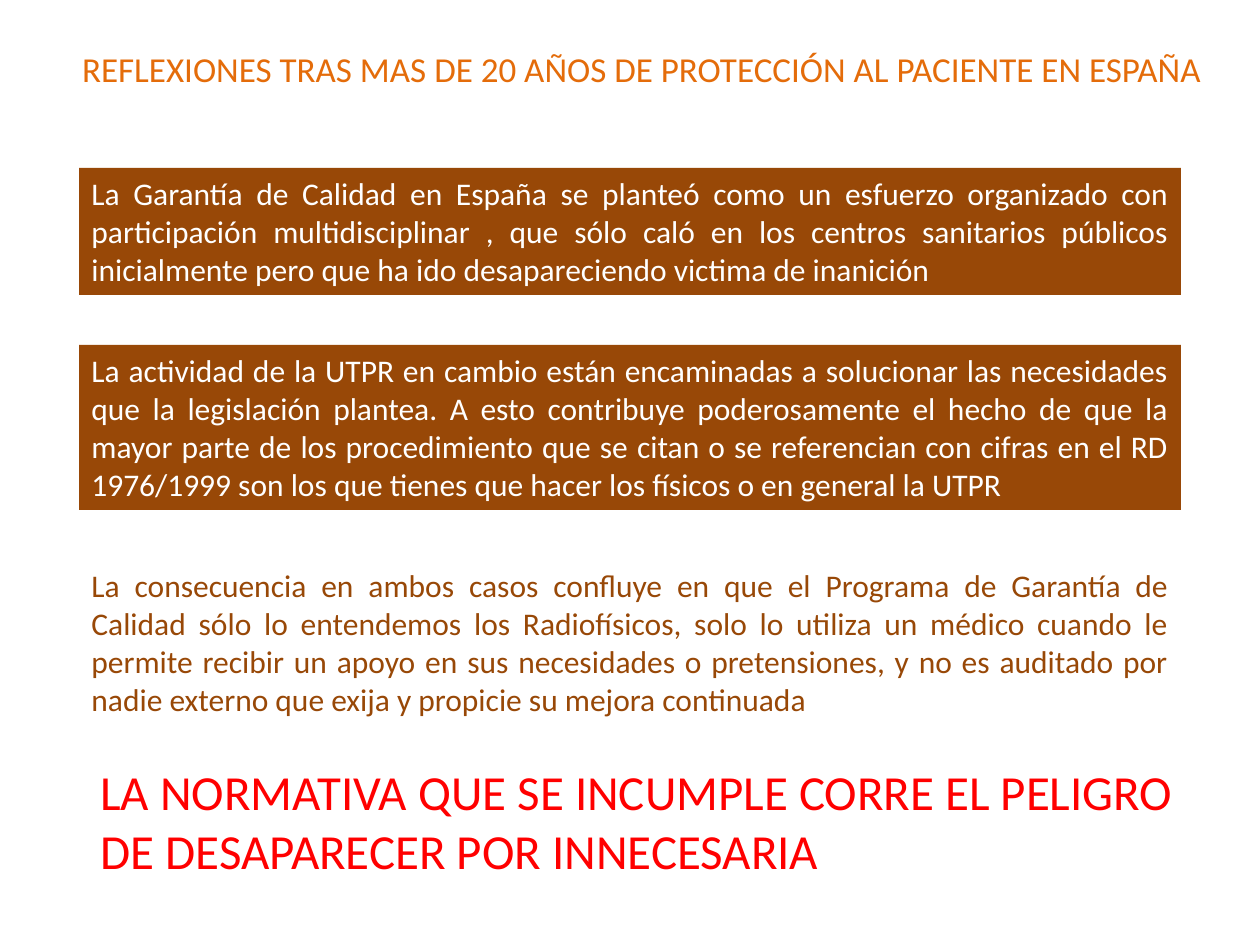
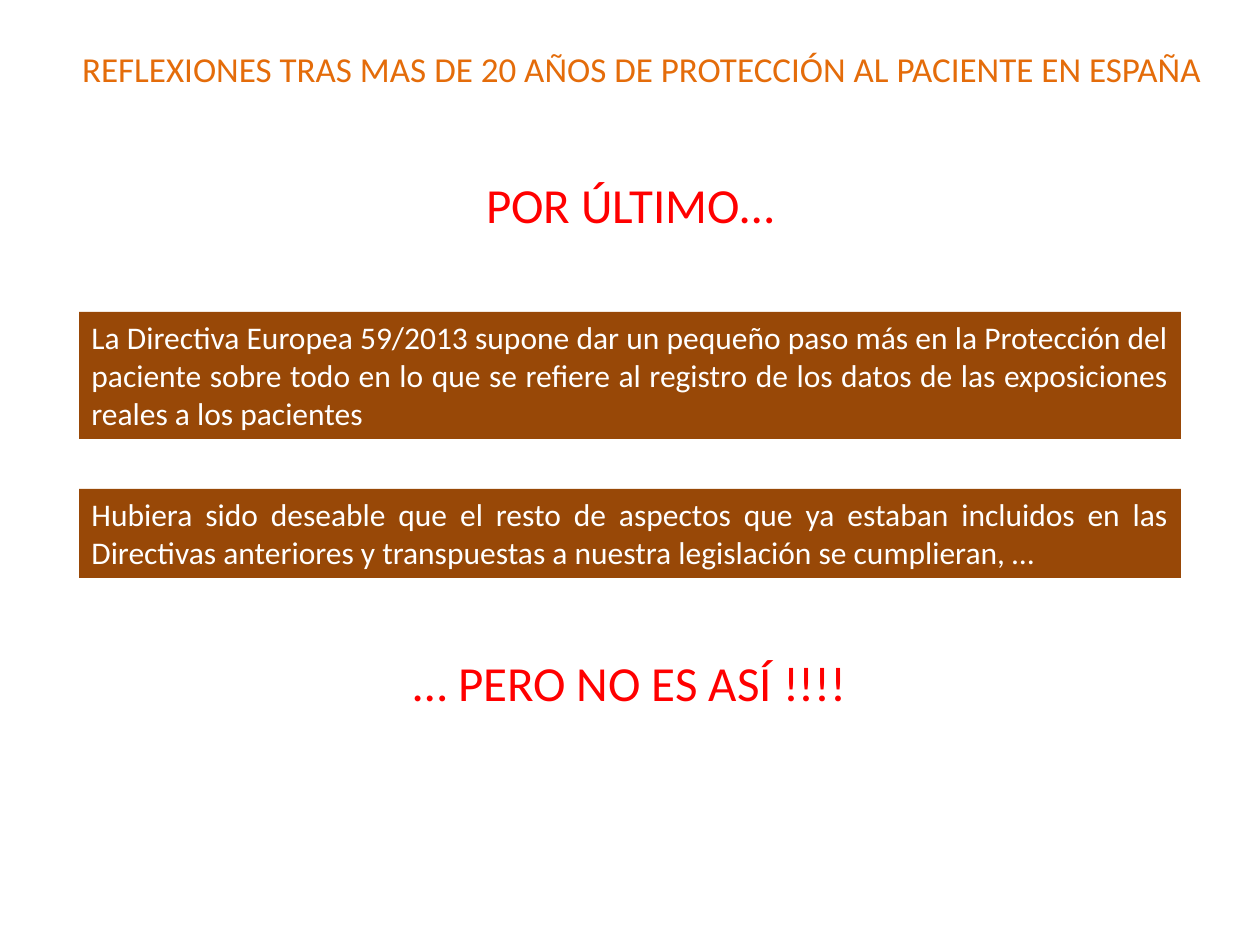
from pptx import Presentation
from pptx import util as u
from pptx.dml.color import RGBColor
from pptx.enum import shapes, text

PX = u.Inches(1) / 126
COLORS = {"title": "E46C0A", "band": "984807", "light": "FFFFFF", "alert": "FF0000"}
TITLE = "REFLEXIONES TRAS MAS DE 20 AÑOS DE PROTECCIÓN AL PACIENTE EN ESPAÑA"
LEFT, WIDTH = 79, 1102
TOP, GAP = 168, 50
PADDING = 13
BODY_LINE, ALERT_LINE = 38, 59
ALIGN = text.PP_ALIGN


def px(length):
    return u.Emu(round(length * PX))


def rgb(name):
    return RGBColor.from_string(COLORS[name])


def height(lines, line):
    """Height in px of a block holding this many lines of text."""
    return lines * line + PADDING


class Deck:
    """Holds the shared style and the slide being filled."""

    def __init__(self):
        self.prs = Presentation()
        self.prs.slide_width, self.prs.slide_height = px(1260), px(945)
        self.slide = None

    def new_slide(self):
        self.slide = self.prs.slides.add_slide(self.prs.slide_layouts[6])
        self.set_text(self.text_box(63, 20, 1158, 97), TITLE, 20, "title", ALIGN.CENTER,
                      vertical_anchor=text.MSO_ANCHOR.MIDDLE,
                      auto_size=text.MSO_AUTO_SIZE.NONE)

    def text_box(self, *place):
        return self.slide.shapes.add_textbox(*map(px, place))

    def set_text(self, holder, words, size, color, align, **frame_format):
        frame = holder.text_frame
        frame_format = {"word_wrap": True, "vertical_anchor": text.MSO_ANCHOR.TOP,
                        "auto_size": text.MSO_AUTO_SIZE.SHAPE_TO_FIT_TEXT, **frame_format}
        for name, value in frame_format.items():
            setattr(frame, name, value)
        paragraph = frame.paragraphs[0]
        paragraph.alignment = align
        run = paragraph.add_run()
        run.text = words
        for name, value in {"name": "Calibri", "size": u.Pt(size)}.items():
            setattr(run.font, name, value)
        run.font.color.rgb = rgb(color)

    def band(self, top, lines, words):
        """Add a filled statement and return the top of the next block."""
        tall = height(lines, BODY_LINE)
        band = self.slide.shapes.add_shape(
            shapes.MSO_SHAPE.RECTANGLE, *map(px, (LEFT, top, WIDTH, tall)))
        band.shadow.inherit = False
        band.fill.solid()
        band.fill.fore_color.rgb = rgb("band")
        band.line.fill.background()
        self.set_text(band, words, 18, "light", ALIGN.JUSTIFY)
        return top + tall + GAP

    def conclusion(self, top, lines, words):
        box = self.text_box(LEFT, top, WIDTH, height(lines, BODY_LINE))
        self.set_text(box, words, 18, "band", ALIGN.JUSTIFY)

    def alert(self, top, lines, words, left=LEFT, align=ALIGN.CENTER):
        box = self.text_box(left, top, WIDTH, height(lines, ALERT_LINE))
        self.set_text(box, words, 28, "alert", align)


def quality_slide(deck):
    deck.new_slide()
    top = deck.band(TOP, 3, (
        "La Garantía de Calidad en España se planteó como un esfuerzo organizado con "
        "participación multidisciplinar , que sólo caló en los centros sanitarios públicos "
        "inicialmente pero que ha ido desapareciendo victima de inanición"))
    top = deck.band(top, 4, (
        "La actividad de la UTPR en cambio están encaminadas a solucionar las necesidades "
        "que la legislación plantea. A esto contribuye poderosamente el hecho de que la "
        "mayor parte de los procedimiento que se citan o se referencian con cifras en el RD "
        "1976/1999 son los que tienes que hacer los físicos o en general la UTPR"))
    deck.conclusion(top, 4, (
        "La consecuencia en ambos casos confluye en que el Programa de Garantía de "
        "Calidad sólo lo entendemos los Radiofísicos, solo lo utiliza un médico cuando le "
        "permite recibir un apoyo en sus necesidades o pretensiones, y no es auditado por "
        "nadie externo que exija y propicie su mejora continuada"))
    deck.alert(755, 2, (
        "LA NORMATIVA QUE SE INCUMPLE CORRE EL PELIGRO DE DESAPARECER POR INNECESARIA"),
        left=88, align=ALIGN.LEFT)


def directive_slide(deck):
    deck.new_slide()
    deck.alert(TOP, 1, "POR ÚLTIMO…")
    top = deck.band(312, 3, (
        "La Directiva Europea 59/2013 supone dar un pequeño paso más en la Protección del "
        "paciente sobre todo en lo que se refiere al registro de los datos de las "
        "exposiciones reales a los pacientes"))
    deck.band(top, 2, (
        "Hubiera sido deseable que el resto de aspectos que ya estaban incluidos en las "
        "Directivas anteriores y transpuestas a nuestra legislación se cumplieran, …"))
    deck.alert(646, 1, "… PERO NO ES ASÍ !!!!")


def main():
    deck = Deck()
    quality_slide(deck)
    directive_slide(deck)
    deck.prs.save("out.pptx")


if __name__ == "__main__":
    main()
